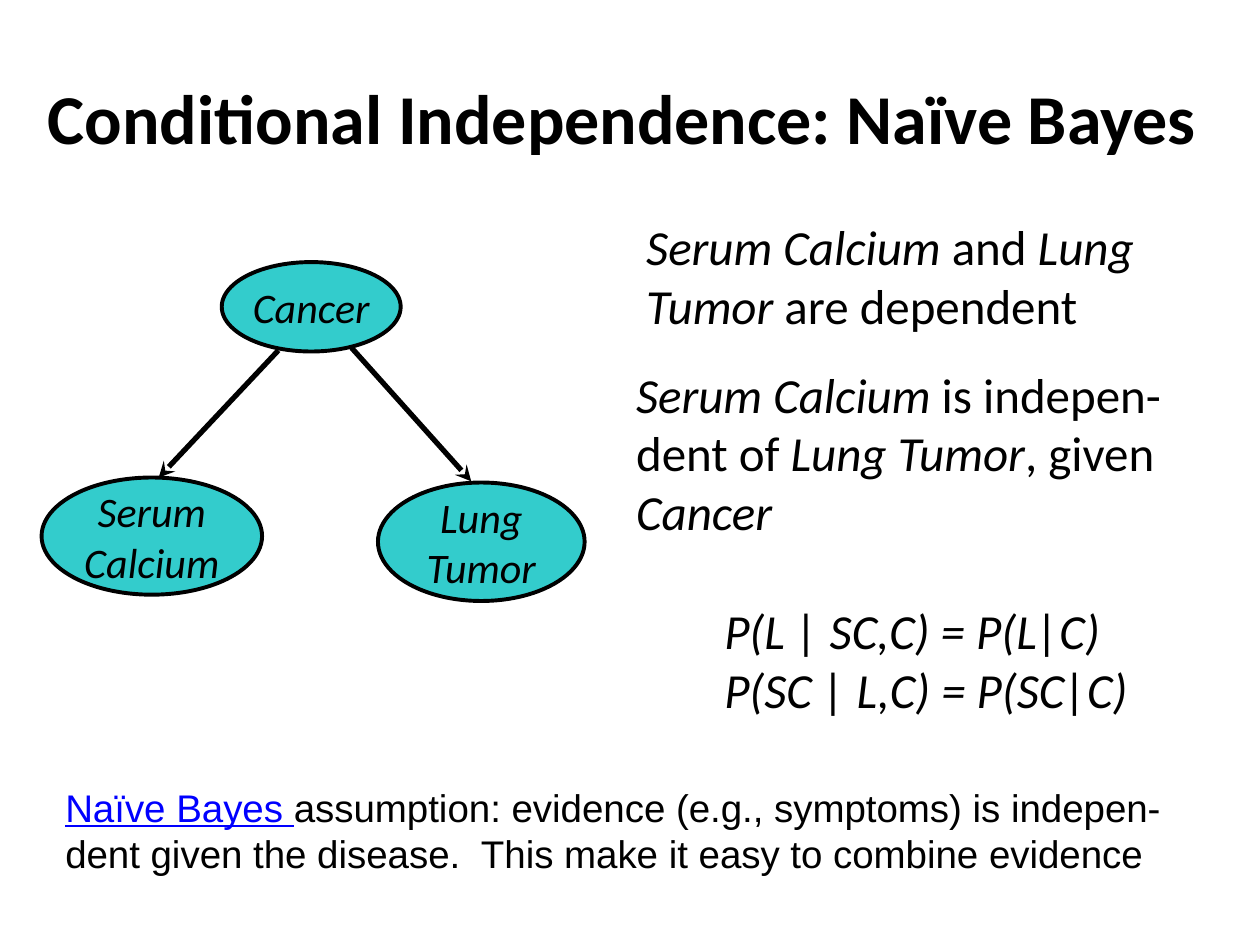
import pptx
import pptx.util
import pptx.dml.color
import pptx.enum.shapes
import pptx.enum.text
from lxml import etree
from pptx.oxml.ns import qn

EMU_PER_PX = 9144  # 100 px to the inch
BLACK, TEAL, BLUE = "000000", "33CCCC", "0000FF"
ALIGN = pptx.enum.text.PP_ALIGN
ANCHOR = pptx.enum.text.MSO_ANCHOR


def px(n):
    return pptx.util.Emu(n * EMU_PER_PX)


def rgb(color):
    return pptx.dml.color.RGBColor.from_string(color)


def set_text(tf, paragraphs, size, align=ALIGN.LEFT, font="Calibri", **common):
    """Each paragraph is a list of (text, format values) runs."""
    for i, runs in enumerate(paragraphs):
        p = tf.paragraphs[0] if i == 0 else tf.add_paragraph()
        p.alignment = align
        for text, values in runs:
            r = p.add_run()
            r.text = text
            values = {"name": font, "size": pptx.util.Pt(size), **common, **values}
            r.font.color.rgb = rgb(values.pop("color", BLACK))
            for name, value in values.items():
                setattr(r.font, name, value)


def add_title(s, box, text):
    sp = s.shapes.title
    sp.left, sp.top, sp.width, sp.height = map(px, box)
    sp.text_frame.vertical_anchor = ANCHOR.MIDDLE
    set_text(sp.text_frame, [[(text, {})]], 40, ALIGN.CENTER, bold=True)


def add_node(s, box, lines):
    sp = s.shapes.add_shape(pptx.enum.shapes.MSO_SHAPE.OVAL, *map(px, box))
    sp.shadow.inherit = False
    sp.fill.solid()
    sp.fill.fore_color.rgb = rgb(TEAL)
    sp.line.color.rgb = rgb(BLACK)
    sp.line.width = pptx.util.Pt(2.25)
    tf = sp.text_frame
    tf.word_wrap = False
    tf.vertical_anchor = ANCHOR.MIDDLE
    set_text(tf, [[(line, {})] for line in lines], 24, ALIGN.CENTER, italic=True)


def add_arrow(s, ends):
    line = s.shapes.add_connector(
        pptx.enum.shapes.MSO_CONNECTOR.STRAIGHT, *map(px, ends))
    line.line.color.rgb = rgb(BLACK)
    line.line.width = pptx.util.Pt(3)
    etree.SubElement(line.line._get_or_add_ln(), qn("a:tailEnd"), type="stealth")
    etree.SubElement(line._element.spPr, qn("a:effectLst"))


def add_text(s, box, paragraphs, size=28, wrap=True, font="Calibri"):
    tf = s.shapes.add_textbox(*map(px, box)).text_frame
    tf.word_wrap = wrap
    tf.auto_size = pptx.enum.text.MSO_AUTO_SIZE.SHAPE_TO_FIT_TEXT
    set_text(tf, paragraphs, size, font=font)


def main():
    prs = pptx.Presentation()
    prs.slide_width, prs.slide_height = px(1000), px(750)
    s = prs.slides.add_slide(prs.slide_layouts[5])
    italic = {"italic": True}

    add_title(s, (0, 30, 1000, 125), "Conditional Independence: Naïve Bayes ")

    # Network: a cause and its two effects
    add_node(s, (176, 208, 142, 71), ["Cancer"])
    add_arrow(s, (279, 276, 374, 382))
    add_arrow(s, (221, 278, 126, 379))
    add_node(s, (300, 383, 164, 94), ["Lung", "Tumor"])
    add_node(s, (33, 379, 175, 93), ["Serum", "Calcium"])

    # Statements and formulas beside the network
    add_text(s, (503, 167, 472, 103), [[
        ("Serum Calcium", italic), (" and ", {}),
        ("Lung Tumor", italic), (" are dependent", {})]])
    add_text(s, (495, 284, 472, 150), [[
        ("Serum Calcium", italic), (" is indepen-dent of ", {}),
        ("Lung Tumor", italic), (", given ", {}), ("Cancer", italic)]])
    formulas = ["P(L | SC,C) = P(L|C)", "P(SC | L,C) = P(SC|C)"]
    add_text(s, (565, 472, 353, 104), [[(f, italic)] for f in formulas], wrap=False)

    # Conclusion
    add_text(s, (42, 617, 933, 84), [[
        ("Naïve Bayes ", {"color": BLUE, "underline": True}),
        ("assumption: evidence (e.g., symptoms) is indepen-dent given the disease.  "
         "This make it easy to combine evidence", {})]], size=22, font="Arial")

    prs.save("out.pptx")


if __name__ == "__main__":
    main()
